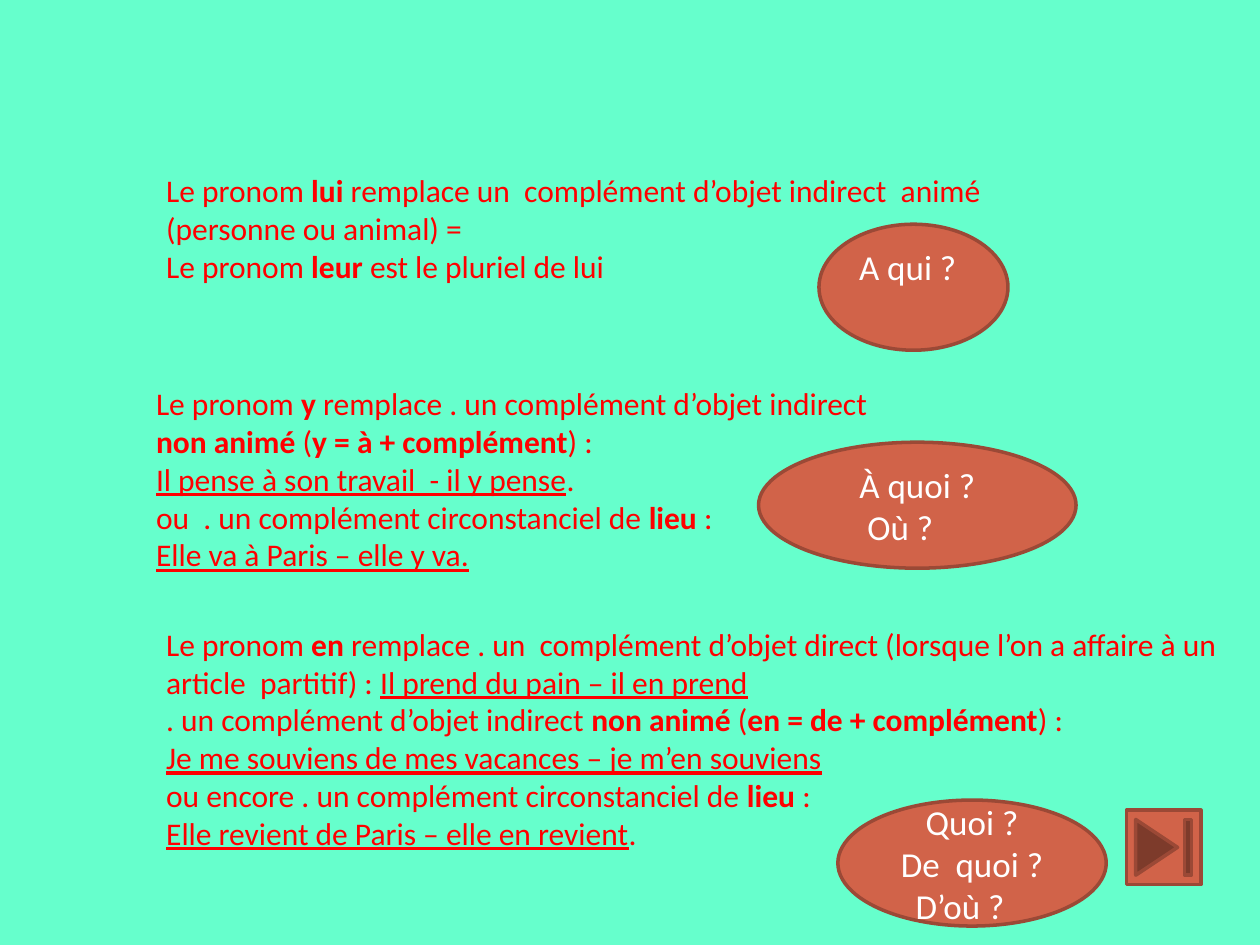
"""Build a slide on the French pronouns lui, leur, y and en."""
import pptx
import pptx.dml.color
import pptx.enum.shapes
import pptx.enum.text
import pptx.util
from dataclasses import dataclass

Inches = pptx.util.Inches
SHAPES = pptx.enum.shapes.MSO_SHAPE
BOLD = {"bold": True}
UNDERLINED = {"underline": True}


@dataclass(frozen=True)
class Theme:
    background: str = "66FFCC"
    fill: str = "D16349"
    outline: str = "9B4936"
    rule_color: str = "FF0000"
    question_color: str = "FFFFFF"
    font: str = "Calibri"
    rule_size: int = 18
    question_size: int = 20
    outline_width: int = 2


class SlideBuilder:
    def __init__(self, slide, theme):
        self.slide = slide
        self.theme = theme

    def color(self, value):
        return pptx.dml.color.RGBColor.from_string(value)

    def background(self):
        fill = self.slide.background.fill
        fill.solid()
        fill.fore_color.rgb = self.color(self.theme.background)

    def run(self, paragraph, text, size, color, **formats):
        run = paragraph.add_run()
        run.text = text
        values = {"name": self.theme.font, "size": pptx.util.Pt(size), **formats}
        for name, value in values.items():
            setattr(run.font, name, value)
        run.font.color.rgb = self.color(color)

    def paragraphs(self, frame, count):
        return [frame.paragraphs[0]] + [frame.add_paragraph() for _ in range(count - 1)]

    def rule(self, left, top, width, height, lines):
        box = self.slide.shapes.add_textbox(*map(Inches, (left, top, width, height)))
        frame = box.text_frame
        frame.word_wrap = True
        for paragraph, line in zip(self.paragraphs(frame, len(lines)), lines):
            for text, formats in line:
                self.run(paragraph, text, self.theme.rule_size, self.theme.rule_color, **formats)

    def shape(self, kind, left, top, width, height):
        shape = self.slide.shapes.add_shape(kind, *map(Inches, (left, top, width, height)))
        shape.shadow.inherit = False
        shape.fill.solid()
        shape.fill.fore_color.rgb = self.color(self.theme.fill)
        shape.line.color.rgb = self.color(self.theme.outline)
        shape.line.width = pptx.util.Pt(self.theme.outline_width)
        return shape

    def question(self, left, top, width, lines, **margins):
        frame = self.shape(SHAPES.OVAL, left, top, width, 1).text_frame
        formats = {
            "word_wrap": True,
            "vertical_anchor": pptx.enum.text.MSO_ANCHOR.MIDDLE,
            **margins,
        }
        for name, value in formats.items():
            setattr(frame, name, value)
        for paragraph, (text, indent) in zip(self.paragraphs(frame, len(lines)), lines):
            paragraph.alignment = pptx.enum.text.PP_ALIGN.CENTER
            if indent:
                paragraph._p.get_or_add_pPr().set("marR", str(Inches(indent)))
            self.run(paragraph, text, self.theme.question_size, self.theme.question_color)


def main():
    presentation = pptx.Presentation()
    presentation.slide_width = Inches(10)
    presentation.slide_height = Inches(7.5)
    slide = presentation.slides.add_slide(presentation.slide_layouts[6])
    builder = SlideBuilder(slide, Theme())
    builder.background()

    builder.rule(1.22, 4.91, 8.71, 1.9, [
        [("Le pronom ", {}), ("en", BOLD),
         (" remplace . un  complément d’objet direct (lorsque l’on a affaire à un", {})],
        [("article  partitif) : ", {}), ("Il prend du pain – il en prend", UNDERLINED)],
        [(". un complément d’objet indirect ", {}), ("non animé", BOLD), (" (", {}),
         ("en = de + complément", BOLD), (") :", {})],
        [("Je me souviens de mes vacances – je m’en souviens", UNDERLINED)],
        [("ou encore . un complément circonstanciel de ", {}), ("lieu", BOLD), (" :", {})],
        [("Elle revient de Paris – elle en revient", UNDERLINED), (".", {})],
    ])
    builder.shape(SHAPES.ACTION_BUTTON_END, 8.94, 6.43, 0.59, 0.59)
    builder.rule(1.22, 1.31, 7.48, 1.01, [
        [("Le pronom ", {}), ("lui", BOLD),
         (" remplace un  complément d’objet indirect  animé (personne ou animal) =", {})],
        [("Le pronom ", {}), ("leur", BOLD), (" est le pluriel de lui", {})],
    ])
    builder.question(6.5, 1.78, 1.5, [("A qui ?", 0)],
                     margin_right=Inches(0.19), margin_bottom=Inches(0.38))
    builder.question(6.65, 6.35, 2.13, [("Quoi ?", 0), ("De  quoi ?", 0), ("D’où ?", 0.19)])
    builder.question(6.02, 3.51, 2.52, [("À quoi ?", 0), ("Où ?", 0.27)])
    builder.rule(1.14, 3, 8.86, 1.6, [
        [("Le pronom ", {}), ("y", BOLD), (" remplace . un complément d’objet indirect", {})],
        [("non animé", BOLD), (" (", {}), ("y = à + complément", BOLD), (") :", {})],
        [("Il pense à son travail  - il y pense", UNDERLINED), (".", {})],
        [("ou  . un complément circonstanciel de ", {}), ("lieu", BOLD), (" :", {})],
        [("Elle va à Paris – elle y va.", UNDERLINED)],
    ])
    presentation.save("out.pptx")


if __name__ == "__main__":
    main()
